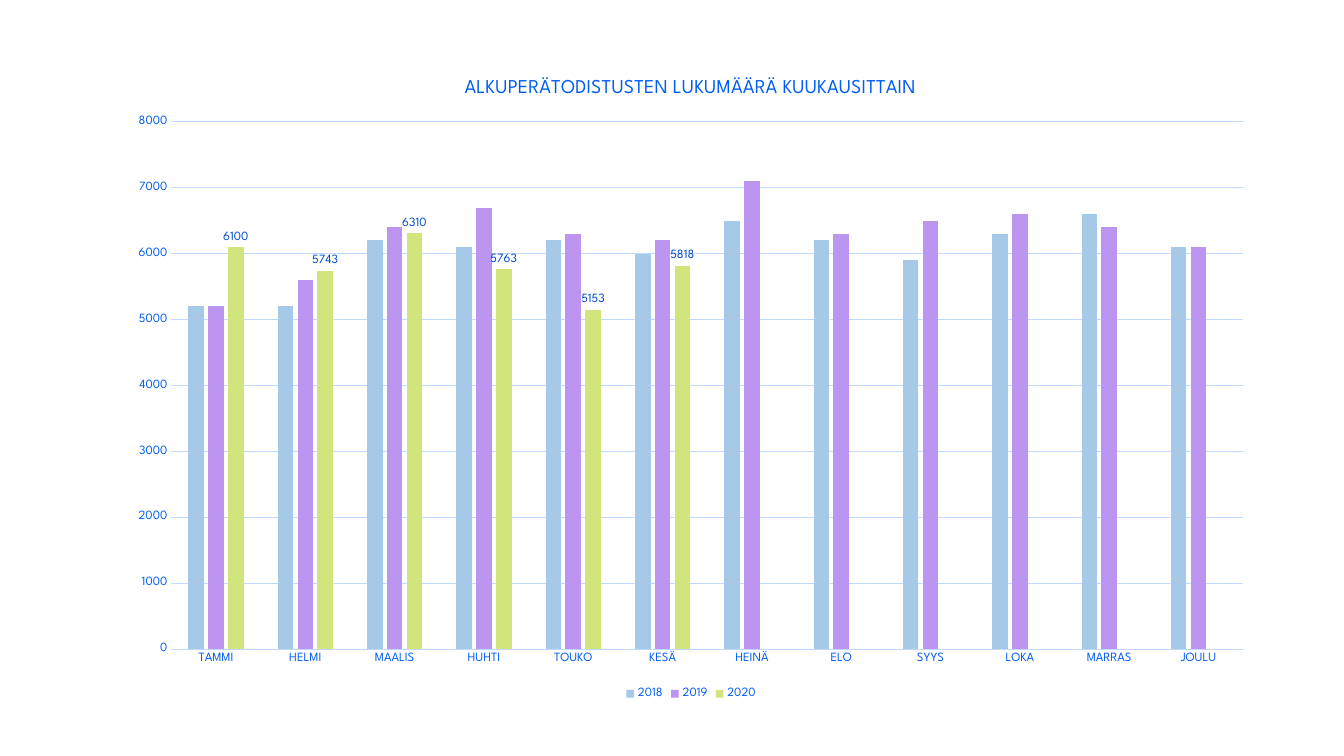
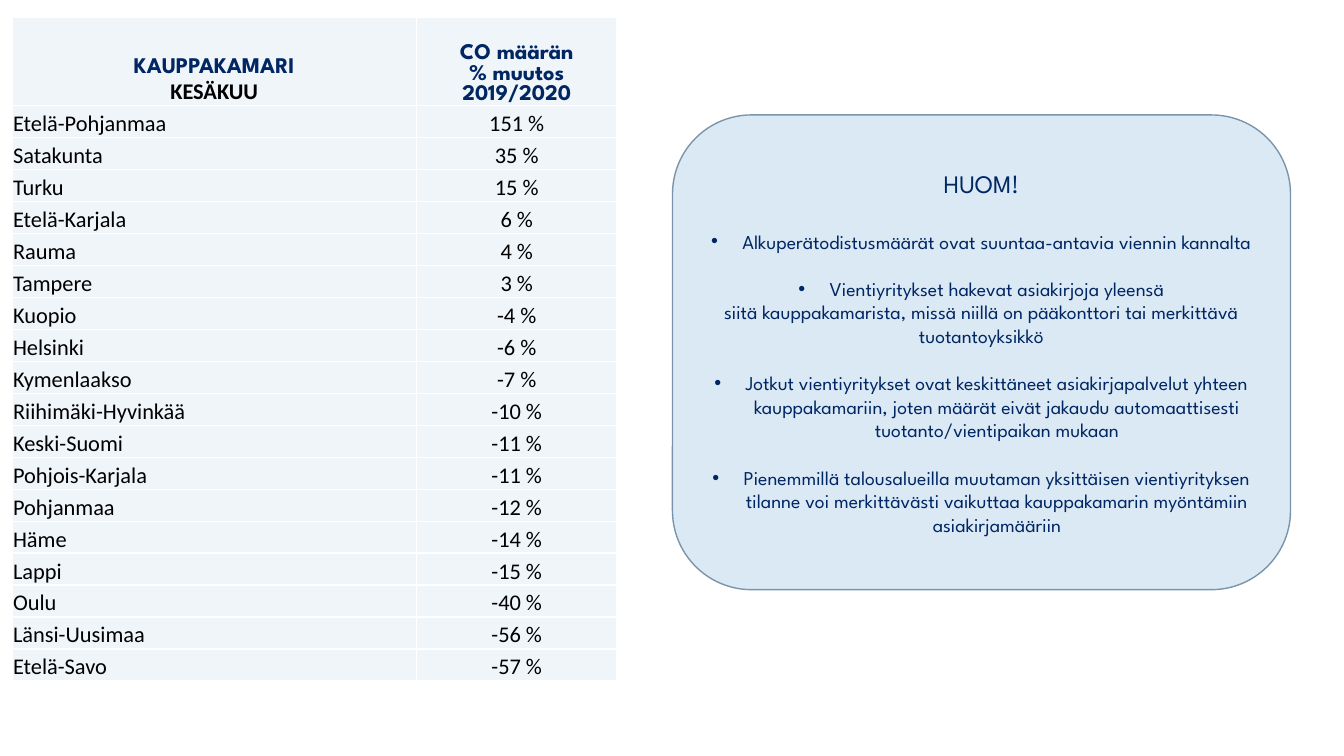
"""Build two slides on monthly certificates of origin and their change by chamber."""
import dataclasses
import typing

import lxml.etree
import pptx
import pptx.chart.chart
import pptx.chart.data
import pptx.dml.color
import pptx.enum.chart
import pptx.enum.shapes
import pptx.enum.text
import pptx.oxml.ns
import pptx.slide
import pptx.table
import pptx.util

Inches = pptx.util.Inches
Pt = pptx.util.Pt
RGBColor = pptx.dml.color.RGBColor
CENTER = pptx.enum.text.PP_ALIGN.CENTER
LEFT = pptx.enum.text.PP_ALIGN.LEFT
qn = pptx.oxml.ns.qn

NAVY = RGBColor(0x00, 0x26, 0x63)
BLUE = RGBColor(0x00, 0x5D, 0xF3)
LABEL_BLUE = RGBColor(0x00, 0x4D, 0xCA)
GRID_BLUE = RGBColor(0xC1, 0xD9, 0xFF)
SKY = RGBColor(0xA5, 0xC9, 0xE7)
LILAC = RGBColor(0xBB, 0x95, 0xEF)
LIME = RGBColor(0xD1, 0xE5, 0x7C)
CELL_FILL = RGBColor(0xF0, 0xF5, 0xFA)
NOTE_FILL = RGBColor(0xDB, 0xE9, 0xF5)
NOTE_LINE = RGBColor(0x7A, 0x95, 0xAB)
BLACK = RGBColor(0x00, 0x00, 0x00)
WHITE = RGBColor(0xFF, 0xFF, 0xFF)
HEAD_FONT = "League Spartan"
BODY_FONT = "Calibri"
CHART_W, CHART_H = 11.41, 6.42
TABLE_H, HEADER_H = 6.59, 0.88


@dataclasses.dataclass(frozen=True)
class Series:
    name: str
    values: tuple[int | None, ...]
    color: RGBColor
    labelled: bool = False


@dataclasses.dataclass(frozen=True)
class Line:
    text: str
    size: int = 16
    font: str = BODY_FONT
    color: RGBColor = BLACK
    bold: bool = False
    align: pptx.enum.text.PP_ALIGN = CENTER
    space_before: int = 0
    bullet: bool = False


MONTHS = ("TAMMI", "HELMI", "MAALIS", "HUHTI", "TOUKO", "KESÄ",
          "HEINÄ", "ELO", "SYYS", "LOKA", "MARRAS", "JOULU")
SERIES = (
    Series("2018", (5200, 5200, 6200, 6100, 6200, 6000,
                    6500, 6200, 5900, 6300, 6600, 6100), SKY),
    Series("2019", (5200, 5600, 6400, 6700, 6300, 6200,
                    7100, 6300, 6500, 6600, 6400, 6100), LILAC),
    Series("2020", (6100, 5743, 6310, 5763, 5153, 5818) + (None,) * 6, LIME, True),
)
CHANGES = (
    ("Etelä-Pohjanmaa", 151), ("Satakunta", 35), ("Turku", 15),
    ("Etelä-Karjala", 6), ("Rauma", 4), ("Tampere", 3), ("Kuopio", -4),
    ("Helsinki", -6), ("Kymenlaakso", -7), ("Riihimäki-Hyvinkää", -10),
    ("Keski-Suomi", -11), ("Pohjois-Karjala", -11), ("Pohjanmaa", -12),
    ("Häme", -14), ("Lappi", -15), ("Oulu", -40), ("Länsi-Uusimaa", -56),
    ("Etelä-Savo", -57),
)


def heading(text: str) -> Line:
    """Describe a bold table heading."""
    return Line(text, font=HEAD_FONT, color=NAVY, bold=True)


def note(text: str, size: int = 14, space_before: int = 17, bullet: bool = True) -> Line:
    """Describe a paragraph of the note box."""
    return Line(text, size, HEAD_FONT, NAVY, space_before=space_before, bullet=bullet)


HEADINGS = (
    (heading("KAUPPAKAMARI"), Line("KESÄKUU", bold=True)),
    (heading("CO määrän"), heading("% muutos 2019/2020")),
)
NOTES = (
    note("HUOM!", 18, 0, False),
    note("Alkuperätodistusmäärät ovat suuntaa-antavia viennin kannalta", space_before=22),
    note("Vientiyritykset hakevat asiakirjoja yleensä"),
    note("siitä kauppakamarista, missä niillä on pääkonttori tai merkittävä "
         "tuotantoyksikkö", space_before=0, bullet=False),
    note("Jotkut vientiyritykset ovat keskittäneet asiakirjapalvelut yhteen "
         "kauppakamariin, joten määrät eivät jakaudu automaattisesti "
         "tuotanto/vientipaikan mukaan"),
    note("Pienemmillä talousalueilla muutaman yksittäisen vientiyrityksen tilanne voi "
         "merkittävästi vaikuttaa kauppakamarin myöntämiin asiakirjamääriin"),
)


def style_font(font: typing.Any, size: int, color: RGBColor,
               name: str = HEAD_FONT, bold: bool = False) -> None:
    """Set size, colour, typeface and weight."""
    font.size = Pt(size)
    font.color.rgb = color
    font.name = name
    font.bold = bold


def write_lines(tf: typing.Any, lines: typing.Sequence[Line]) -> None:
    """Fill a text frame with one paragraph per line."""
    tf.text = "\n".join(line.text for line in lines)
    for p, line in zip(tf.paragraphs, lines):
        p.alignment = line.align
        p.space_before = Pt(line.space_before)
        if line.bullet:
            pPr = p._p.get_or_add_pPr()
            pPr.set("marL", str(Inches(0.31)))
            pPr.set("indent", str(-Inches(0.31)))
            lxml.etree.SubElement(pPr, qn("a:buFont")).set("typeface", "Arial")
            lxml.etree.SubElement(pPr, qn("a:buChar")).set("char", "•")
        for r in p.runs:
            style_font(r.font, line.size, line.color, line.font, line.bold)


def place(element: typing.Any, index: int, **settings: str | float) -> None:
    """Give a chart part a manual layout."""
    for old in element.findall(qn("c:layout")):
        element.remove(old)
    layout = lxml.etree.Element(qn("c:layout"))
    manual = lxml.etree.SubElement(layout, qn("c:manualLayout"))
    for tag, value in settings.items():
        lxml.etree.SubElement(manual, qn(f"c:{tag}")).set("val", str(value))
    element.insert(index, layout)


def style_axes(chart: pptx.chart.chart.Chart) -> None:
    """Style both axes and the gridlines."""
    months, counts = chart.category_axis, chart.value_axis
    for axis in (months, counts):
        axis.major_tick_mark = pptx.enum.chart.XL_TICK_MARK.NONE
        axis.minor_tick_mark = pptx.enum.chart.XL_TICK_MARK.NONE
        style_font(axis.tick_labels.font, 9, BLUE)
    counts.minimum_scale, counts.maximum_scale, counts.major_unit = 0, 8000, 1000
    counts.has_major_gridlines = True
    counts.format.line.fill.background()
    for line in (months.format.line, counts.major_gridlines.format.line):
        line.color.rgb = GRID_BLUE
        line.width = Pt(0.75)


def add_monthly_chart(s: pptx.slide.Slide) -> None:
    """Draw the column chart of monthly counts."""
    data = pptx.chart.data.CategoryChartData()
    data.categories = MONTHS
    for series in SERIES:
        data.add_series(series.name, series.values)
    chart = s.shapes.add_chart(
        pptx.enum.chart.XL_CHART_TYPE.COLUMN_CLUSTERED,
        Inches(1.15), Inches(0.56), Inches(CHART_W), Inches(CHART_H), data).chart
    style_font(chart.font, 10, NAVY)

    chart.has_title = True
    title = chart.chart_title
    write_lines(title.text_frame, [
        Line("ALKUPERÄTODISTUSTEN LUKUMÄÄRÄ KUUKAUSITTAIN", 14, HEAD_FONT, BLUE)])
    place(title._element, 1, xMode="edge", yMode="edge", x=0.3, y=0.17 / CHART_H)
    place(chart._chartSpace.chart.plotArea, 0, layoutTarget="inner",
          xMode="edge", yMode="edge", x=0.55 / CHART_W, y=0.65 / CHART_H,
          w=10.63 / CHART_W, h=5.23 / CHART_H)

    chart.has_legend = True
    chart.legend.position = pptx.enum.chart.XL_LEGEND_POSITION.BOTTOM
    chart.legend.include_in_layout = False
    style_font(chart.legend.font, 9, BLUE)
    style_axes(chart)

    plot = chart.plots[0]
    plot.gap_width, plot.overlap, plot.vary_by_categories = 219, -27, False
    for bars, series in zip(plot.series, SERIES):
        bars.format.fill.solid()
        bars.format.fill.fore_color.rgb = series.color
        if series.labelled:
            labels = bars.data_labels
            labels.show_value = True
            labels.position = pptx.enum.chart.XL_LABEL_POSITION.OUTSIDE_END
            style_font(labels.font, 9, LABEL_BLUE)


def fill_cell(cell: pptx.table._Cell, lines: typing.Sequence[Line]) -> None:
    """Write and style one table cell with white borders."""
    write_lines(cell.text_frame, lines)
    cell.vertical_anchor = pptx.enum.text.MSO_ANCHOR.BOTTOM
    cell.margin_left = cell.margin_right = cell.margin_top = Inches(0.01)
    cell.margin_bottom = 0
    tcPr = cell._tc.get_or_add_tcPr()
    for side in ("lnL", "lnR", "lnT", "lnB"):
        ln = lxml.etree.SubElement(tcPr, qn(f"a:{side}"), w=str(Pt(1)))
        fill = lxml.etree.SubElement(ln, qn("a:solidFill"))
        lxml.etree.SubElement(fill, qn("a:srgbClr")).set("val", str(WHITE))
    cell.fill.solid()
    cell.fill.fore_color.rgb = CELL_FILL


def add_change_table(s: pptx.slide.Slide) -> None:
    """Draw the table of percentage changes by chamber."""
    rows = [HEADINGS] + [
        ((Line(name, align=LEFT),), (Line(f"{change} %"),)) for name, change in CHANGES]
    table = s.shapes.add_table(
        len(rows), 2, Inches(0.12), Inches(0.17), Inches(6), Inches(TABLE_H)).table
    table.first_row = table.horz_banding = False
    for column, width in zip(table.columns, (4.01, 1.99)):
        column.width = Inches(width)
    row_height = (TABLE_H - HEADER_H) / len(CHANGES)
    for i, row in enumerate(rows):
        table.rows[i].height = Inches(row_height if i else HEADER_H)
        for j, lines in enumerate(row):
            fill_cell(table.cell(i, j), lines)


def add_note_box(s: pptx.slide.Slide) -> None:
    """Draw the rounded box with the remarks."""
    sp = s.shapes.add_shape(pptx.enum.shapes.MSO_SHAPE.ROUNDED_RECTANGLE,
                            Inches(6.67), Inches(1.14), Inches(6.13), Inches(4.71))
    sp.shadow.inherit = False
    sp.fill.solid()
    sp.fill.fore_color.rgb = NOTE_FILL
    sp.line.color.rgb = NOTE_LINE
    sp.line.width = Pt(1)
    tf = sp.text_frame
    tf.word_wrap = True
    tf.vertical_anchor = pptx.enum.text.MSO_ANCHOR.MIDDLE
    write_lines(tf, NOTES)


def main() -> None:
    """Build and save the presentation."""
    prs = pptx.Presentation()
    prs.slide_width, prs.slide_height = Inches(13.33), Inches(7.5)
    blank = prs.slide_layouts[6]
    add_monthly_chart(prs.slides.add_slide(blank))
    s = prs.slides.add_slide(blank)
    add_change_table(s)
    add_note_box(s)
    prs.save("out.pptx")


if __name__ == "__main__":
    main()
